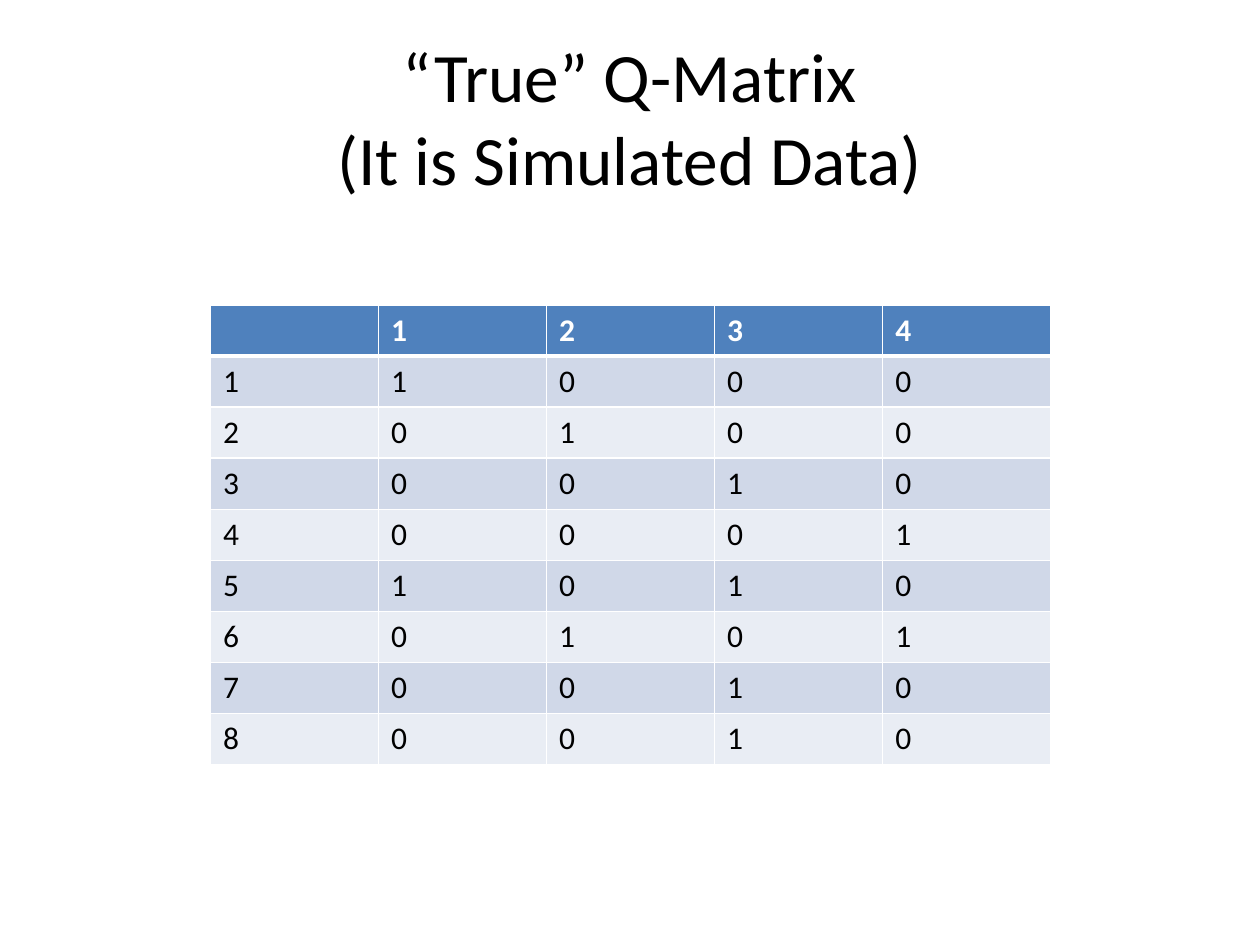
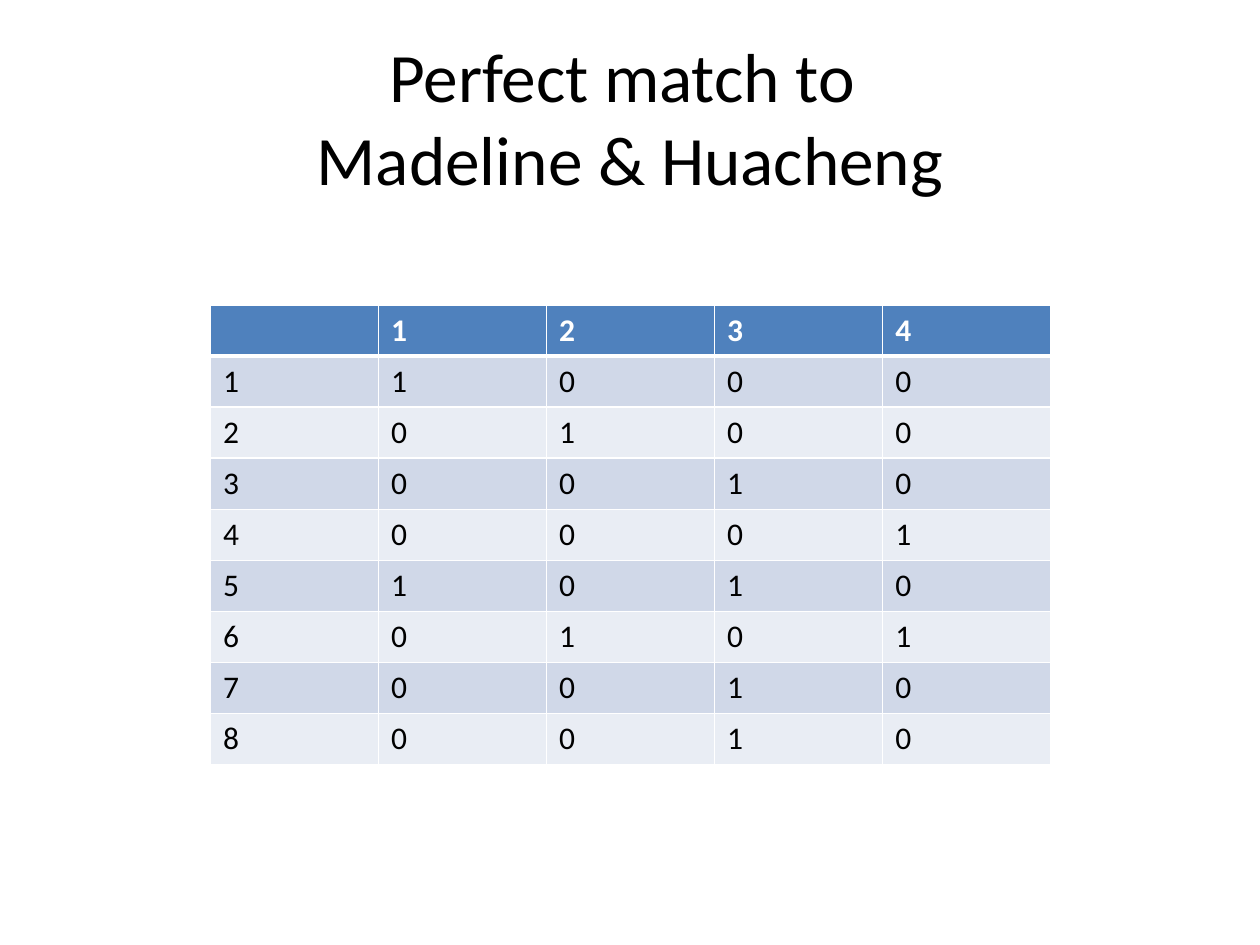
from dataclasses import dataclass

from lxml.etree import SubElement
from pptx import Presentation
from pptx.dml.color import RGBColor
from pptx.enum.text import MSO_ANCHOR, MSO_AUTO_SIZE, PP_ALIGN
from pptx.oxml.ns import qn
from pptx.presentation import Presentation as Deck
from pptx.slide import Slide
from pptx.table import _Cell as Cell
from pptx.text.text import TextFrame
from pptx.util import Inches, Pt

# Shared style
COLORS = {
    "text": "000000",
    "header_text": "FFFFFF",
    "header": "4F81BD",
    "odd_row": "D0D8E8",
    "even_row": "E9EDF4",
    "border": "FFFFFF",
}
FONT = "Calibri"
TITLE_SIZE = Pt(39.6)
CELL_SIZE = Pt(18)
THIN, THICK = Pt(1), Pt(3)
TITLE_ONLY_LAYOUT = 5

# Skills required by each item
Q_MATRIX = [
    [1, 0, 0, 0],
    [0, 1, 0, 0],
    [0, 0, 1, 0],
    [0, 0, 0, 1],
    [1, 0, 1, 0],
    [0, 1, 0, 1],
    [0, 0, 1, 0],
    [0, 0, 1, 0],
]


@dataclass
class MatrixSlide:
    title_lines: list[str]
    matrix: list[list[int]]


MATRIX_SLIDES = [
    MatrixSlide(["“True” Q-Matrix", "(It is Simulated Data)"], Q_MATRIX),
    MatrixSlide(["Perfect match to ", "Madeline & Huacheng"], Q_MATRIX),
]


def format_runs(text_frame: TextFrame, size: Pt, color: str, bold: bool = False) -> None:
    for paragraph in text_frame.paragraphs:
        for run in paragraph.runs:
            run.font.name = FONT
            run.font.size = size
            run.font.bold = bold
            run.font.color.rgb = RGBColor.from_string(COLORS[color])


def add_title(slide: Slide, lines: list[str]) -> None:
    title = slide.shapes.title
    title.left, title.top = Inches(0.5), Inches(0.3)
    title.width, title.height = Inches(9), Inches(1.25)
    text_frame = title.text_frame
    text_frame.text = "\v".join(lines)  # line break within one paragraph
    text_frame.word_wrap = True
    text_frame.auto_size = MSO_AUTO_SIZE.NONE
    text_frame.vertical_anchor = MSO_ANCHOR.MIDDLE
    text_frame.paragraphs[0].alignment = PP_ALIGN.CENTER
    format_runs(text_frame, TITLE_SIZE, "text")


def set_borders(cell: Cell, top: Pt, bottom: Pt) -> None:
    properties = cell._tc.get_or_add_tcPr()
    widths = {"a:lnL": THIN, "a:lnR": THIN, "a:lnT": top, "a:lnB": bottom}
    for tag, width in widths.items():
        line = SubElement(properties, qn(tag), w=str(int(width)))
        fill = SubElement(line, qn("a:solidFill"))
        SubElement(fill, qn("a:srgbClr"), val=COLORS["border"])


def style_cell(cell: Cell, row: int) -> None:
    is_header = row == 0
    # The rule under the header belongs to both rows that meet there
    set_borders(cell, THICK if row == 1 else THIN, THICK if is_header else THIN)
    band = "header" if is_header else "odd_row" if row % 2 else "even_row"
    cell.fill.solid()
    cell.fill.fore_color.rgb = RGBColor.from_string(COLORS[band])
    text_color = "header_text" if is_header else "text"
    format_runs(cell.text_frame, CELL_SIZE, text_color, bold=is_header)


def add_matrix(slide: Slide, matrix: list[list[int]]) -> None:
    skills = range(1, len(matrix[0]) + 1)
    rows = [["", *skills]]
    rows += [[item, *values] for item, values in enumerate(matrix, start=1)]
    table = slide.shapes.add_table(
        len(rows), len(rows[0]),
        Inches(1.67), Inches(2.42), Inches(6.67), Inches(3.65),
    ).table
    for row, values in enumerate(rows):
        for column, value in enumerate(values):
            cell = table.cell(row, column)
            cell.text_frame.text = str(value)
            style_cell(cell, row)


def add_matrix_slide(presentation: Deck, content: MatrixSlide) -> None:
    layout = presentation.slide_layouts[TITLE_ONLY_LAYOUT]
    slide = presentation.slides.add_slide(layout)
    add_title(slide, content.title_lines)
    add_matrix(slide, content.matrix)


def main() -> None:
    presentation = Presentation()
    presentation.slide_width = Inches(10)
    presentation.slide_height = Inches(7.5)
    for content in MATRIX_SLIDES:
        add_matrix_slide(presentation, content)
    presentation.save("out.pptx")


if __name__ == "__main__":
    main()
